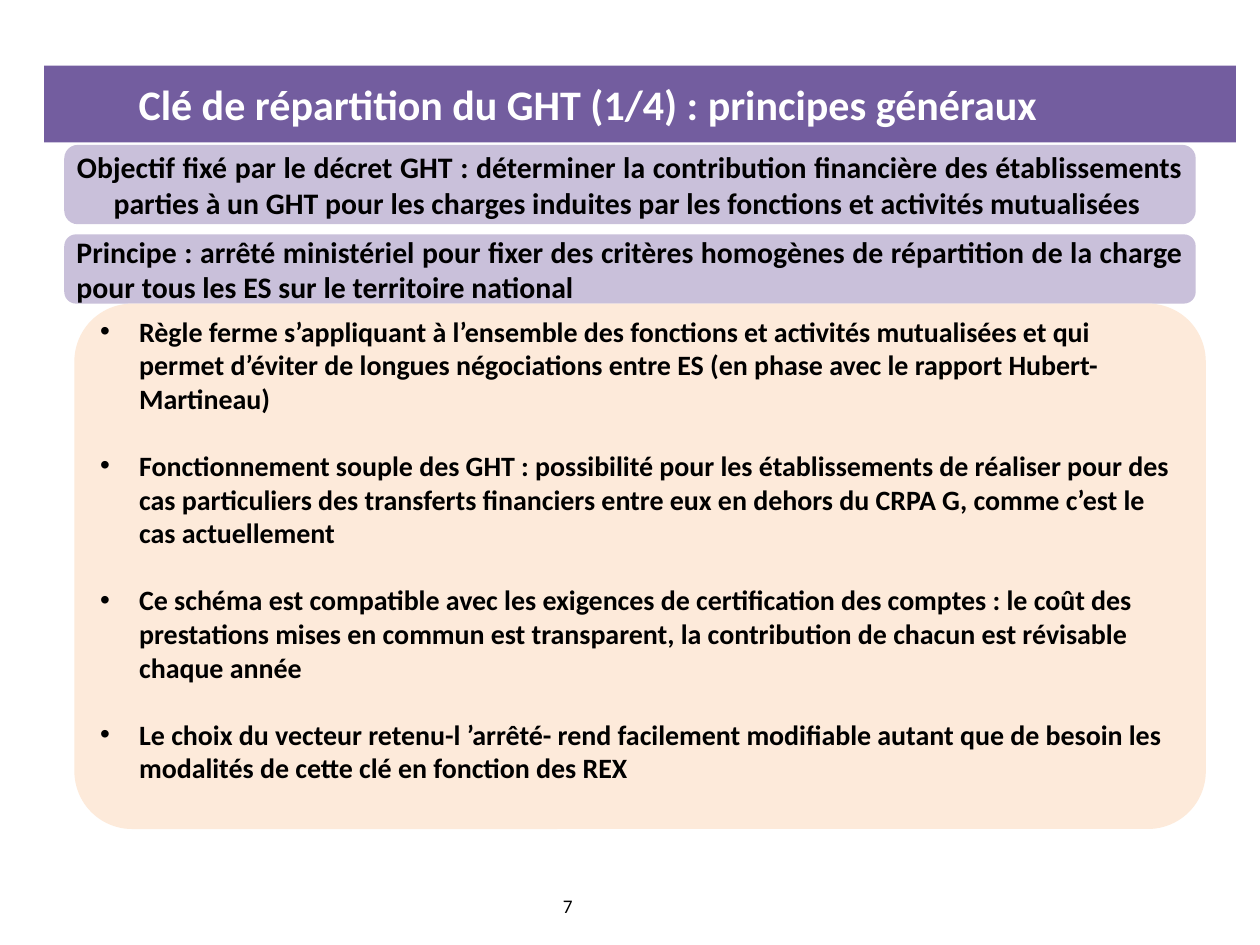
from pptx import Presentation
from pptx.util import Inches, Pt
from pptx.dml.color import RGBColor
from pptx.enum.shapes import MSO_SHAPE
from pptx.enum.text import MSO_ANCHOR, MSO_AUTO_SIZE, PP_ALIGN
from lxml.etree import SubElement
from pptx.oxml.ns import qn

UNIT = 0.1
TITLE = "Clé de répartition du GHT (1/4) : principes généraux"
GOAL = "Objectif fixé par le décret GHT : déterminer la contribution financière des établissements parties à un GHT pour les charges induites par les fonctions et activités mutualisées"
RULE = "Principe : arrêté ministériel pour fixer des critères homogènes de répartition de la charge pour tous les ES sur le territoire national"
POINTS = [
    "Règle ferme s’appliquant à l’ensemble des fonctions et activités mutualisées et qui permet d’éviter de longues négociations entre ES (en phase avec le rapport Hubert-Martineau)",
    "Fonctionnement souple des GHT : possibilité pour les établissements de réaliser pour des cas particuliers des transferts financiers entre eux en dehors du CRPA G, comme c’est le cas actuellement",
    "Ce schéma est compatible avec les exigences de certification des comptes : le coût des prestations mises en commun est transparent, la contribution de chacun est révisable chaque année",
    "Le choix du vecteur retenu-l ’arrêté- rend facilement modifiable autant que de besoin les modalités de cette clé en fonction des REX",
]


def color(code):
    return RGBColor.from_string(code)


class Deck:
    """Holds the style and current slide, placing items on a 100 by 75 grid."""

    font = "Calibri"
    ink = "000000"
    white = "FFFFFF"
    purple = "735D9F"
    lilac = "C9C0DA"
    peach = "FDEADA"

    def __init__(self):
        self.prs = Presentation()
        self.prs.slide_width, self.prs.slide_height = self.grid(100, 75)
        self.slide = self.prs.slides.add_slide(self.prs.slide_layouts[5])

    def grid(self, *cells):
        return [Inches(cell * UNIT) for cell in cells]

    def style(self, shape, lines, size, tint=ink, bold=True, align=PP_ALIGN.LEFT,
              left=0, hang=0, gap=0, bullet=False):
        frame = shape.text_frame
        frame.word_wrap = True
        frame.auto_size = MSO_AUTO_SIZE.NONE
        frame.text = "\n".join(lines)
        for i, par in enumerate(frame.paragraphs):
            props = par._p.get_or_add_pPr()
            props.set("marL", str(Inches(left)))
            props.set("indent", str(-Inches(hang)))
            par.alignment = align
            par.space_before = Pt(gap if i else 0)
            if bullet:
                SubElement(props, qn("a:buFont")).set("typeface", "Arial")
                SubElement(props, qn("a:buChar")).set("char", "•")
            for run in par.runs:
                run.font.name = self.font
                run.font.size = Pt(size)
                run.font.bold = bold
                run.font.color.rgb = color(tint)

    def pad(self, frame, low=0.04):
        frame.margin_left = frame.margin_right = Inches(0.07)
        frame.margin_top = Inches(0.04)
        frame.margin_bottom = Inches(low)
        frame.vertical_anchor = MSO_ANCHOR.MIDDLE

    def fill(self, shape, code):
        shape.fill.solid()
        shape.fill.fore_color.rgb = color(code)

    def title(self, cells, text):
        shape = self.slide.shapes.title
        shape.left, shape.top, shape.width, shape.height = self.grid(*cells)
        self.fill(shape, self.purple)
        self.pad(shape.text_frame)
        self.style(shape, [text], 24, self.white, left=0.68)

    def card(self, cells, code, lines, size, round=0.17, low=0.04, **look):
        shape = self.slide.shapes.add_shape(MSO_SHAPE.ROUNDED_RECTANGLE, *self.grid(*cells))
        shape.adjustments[0] = round
        shape.shadow.inherit = False
        shape.line.fill.background()
        self.fill(shape, code)
        self.pad(shape.text_frame, low)
        self.style(shape, lines, size, **look)

    def label(self, cells, text, size):
        box = self.slide.shapes.add_textbox(*self.grid(*cells))
        self.style(box, [text], size, bold=False)


def main():
    deck = Deck()
    deck.title((3.5, 5.2, 94.6, 6.1), TITLE)
    deck.card((5.1, 11.5, 89.8, 6.3), deck.lilac, [GOAL], 17,
              align=PP_ALIGN.JUSTIFY, left=0.29, hang=0.29)
    deck.card((5.1, 18.6, 89.8, 5.5), deck.lilac, [RULE], 17, align=PP_ALIGN.JUSTIFY)
    deck.card((5.9, 24.1, 89.8, 41.7), deck.peach, POINTS, 16, round=0.11, low=0.31,
              left=0.31, hang=0.31, gap=19.2, bullet=True)
    deck.label((43.7, 70.5, 23.3, 4), "7", 11)
    deck.prs.save("out.pptx")


if __name__ == "__main__":
    main()
